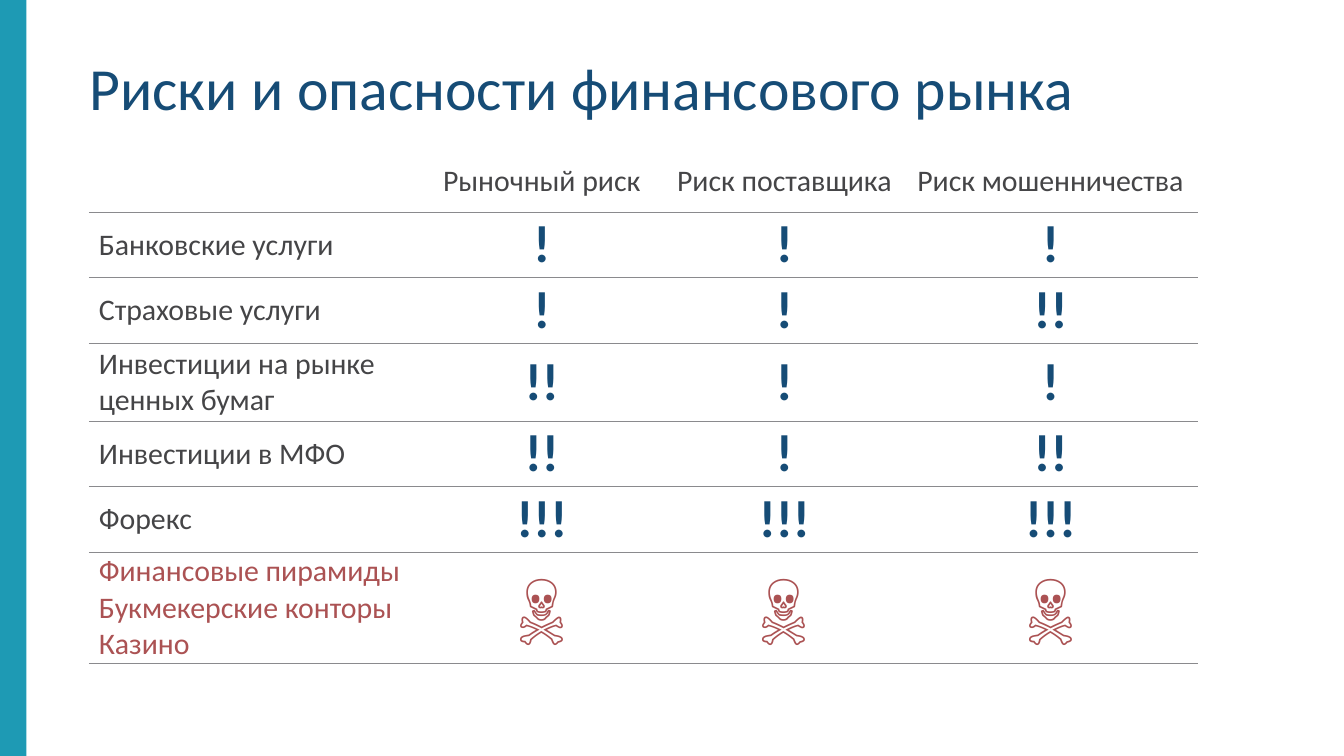
from dataclasses import dataclass

from lxml import etree
from pptx import Presentation
from pptx.dml.color import RGBColor
from pptx.enum.shapes import MSO_SHAPE
from pptx.enum.text import MSO_ANCHOR, MSO_AUTO_SIZE, PP_ALIGN
from pptx.oxml.ns import qn
from pptx.util import Pt

RECTANGLE = MSO_SHAPE.RECTANGLE
TOP, MIDDLE = MSO_ANCHOR.TOP, MSO_ANCHOR.MIDDLE
LEFT, CENTER = PP_ALIGN.LEFT, PP_ALIGN.CENTER
NO_AUTOFIT = MSO_AUTO_SIZE.NONE
TITLE_ONLY = 5


@dataclass(frozen=True)
class Theme:
    font: str = "Calibri"
    navy: str = "164C76"
    gray: str = "454547"
    red: str = "AB5253"
    teal: str = "1E9AB4"
    rule: str = "8A8A8D"
    white: str = "FFFFFF"
    title_size: int = 32
    text_size: int = 16
    mark_size: int = 28
    skull_size: int = 36


THEME = Theme()
PAGE_WIDTH, PAGE_HEIGHT = 720, 405
MARGIN_LEFT, CONTENT_WIDTH = 48, 593.28
COLUMN_WIDTHS = [176.4, 131.76, 128.16, 156.96]
ROW_HEIGHTS = [33.12, 35.1, 35.1, 41.76, 35.1, 35.1, 59.76]
HEADERS = ["", "Рыночный риск", "Риск поставщика", "Риск мошенничества"]
RISKS = [
    ("Банковские услуги", "!", "!", "!"),
    ("Страховые услуги", "!", "!", "!!"),
    ("Инвестиции на рынке ценных бумаг", "!!", "!", "!"),
    ("Инвестиции в МФО", "!!", "!", "!!"),
    ("Форекс", "!!!", "!!!", "!!!"),
]
DANGER = ("Финансовые пирамиды\nБукмекерские конторы\nКазино", "☠", "☠", "☠")


def write_text(frame, text, size, color, align=LEFT, bold=False):
    frame.text = text
    for para in frame.paragraphs:
        para.alignment = align
        for span in para.runs:
            span.font.name = THEME.font
            span.font.size = Pt(size)
            span.font.bold = bold
            span.font.color.rgb = RGBColor.from_string(color)


def add_border(cell, side, color, width):
    properties = cell._tc.get_or_add_tcPr()
    line = etree.SubElement(properties, qn(f"a:ln{side}"), w=str(Pt(width)))
    fill = etree.SubElement(line, qn("a:solidFill"))
    etree.SubElement(fill, qn("a:srgbClr"), val=color)


def style_cell(cell, is_header):
    cell.vertical_anchor = MIDDLE
    cell.margin_left = cell.margin_right = Pt(5.04)
    cell.margin_top = cell.margin_bottom = 0
    for side in "LR":
        add_border(cell, side, THEME.white, 1)
    for side in "B" if is_header else "TB":
        add_border(cell, side, THEME.rule, 0.5)
    cell.fill.background()


def fill_row(table, row, texts, label_color, mark_size, mark_color, bold):
    for column, text in enumerate(texts):
        cell = table.cell(row, column)
        style_cell(cell, row == 0)
        if column == 0:
            write_text(cell.text_frame, text, THEME.text_size, label_color)
        else:
            write_text(cell.text_frame, text, mark_size, mark_color, CENTER, bold)


def add_risk_table(page):
    table = page.shapes.add_table(
        len(ROW_HEIGHTS), len(COLUMN_WIDTHS), Pt(MARGIN_LEFT), Pt(80.64),
        Pt(CONTENT_WIDTH), Pt(sum(ROW_HEIGHTS))).table
    table.first_row = table.horz_banding = False
    for column, width in zip(table.columns, COLUMN_WIDTHS):
        column.width = Pt(width)
    for row, height in zip(table.rows, ROW_HEIGHTS):
        row.height = Pt(height)
    fill_row(table, 0, HEADERS, THEME.gray, THEME.text_size, THEME.gray, False)
    for row, texts in enumerate(RISKS, start=1):
        fill_row(table, row, texts, THEME.gray, THEME.mark_size, THEME.navy, True)
    fill_row(table, len(RISKS) + 1, DANGER, THEME.red, THEME.skull_size, THEME.red, False)


def set_title(page, text):
    title = page.shapes.title
    title.left, title.top = Pt(MARGIN_LEFT), Pt(27.4)
    title.width, title.height = Pt(CONTENT_WIDTH), Pt(31)
    frame = title.text_frame
    frame.margin_left = frame.margin_right = frame.margin_top = frame.margin_bottom = 0
    frame.vertical_anchor = TOP
    frame.word_wrap = True
    frame.auto_size = NO_AUTOFIT
    write_text(frame, text, THEME.title_size, THEME.navy)


def add_side_bar(page):
    bar = page.shapes.add_shape(RECTANGLE, 0, 0, Pt(14.2), Pt(PAGE_HEIGHT))
    bar.shadow.inherit = False
    bar.fill.solid()
    bar.fill.fore_color.rgb = RGBColor.from_string(THEME.teal)
    bar.line.fill.background()


def main():
    deck = Presentation()
    deck.slide_width, deck.slide_height = Pt(PAGE_WIDTH), Pt(PAGE_HEIGHT)
    page = deck.slides.add_slide(deck.slide_layouts[TITLE_ONLY])
    set_title(page, "Риски и опасности финансового рынка")
    add_risk_table(page)
    add_side_bar(page)
    deck.save("out.pptx")


if __name__ == "__main__":
    main()
